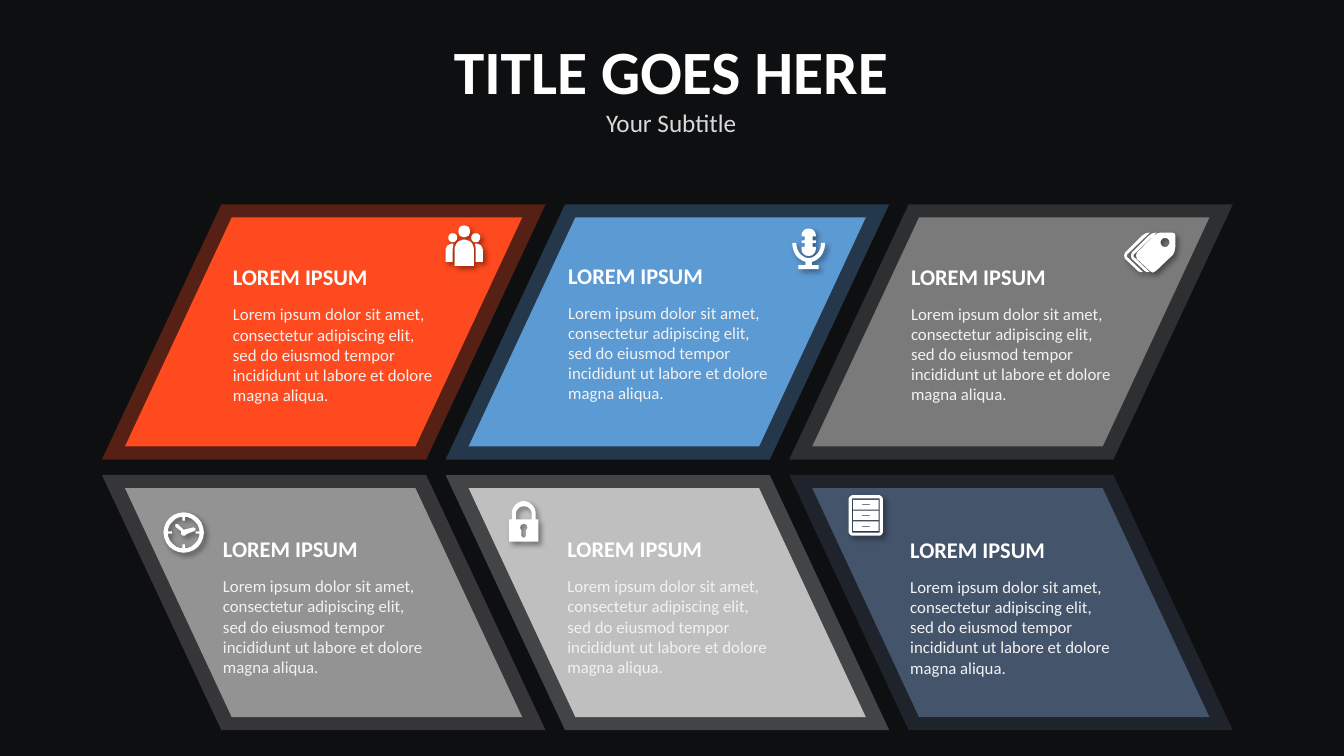
from math import cos, radians, sin

from lxml.etree import SubElement
from pptx import Presentation
from pptx.dml.color import RGBColor
from pptx.enum.text import MSO_ANCHOR, PP_ALIGN
from pptx.oxml.ns import qn
from pptx.util import Cm, Pt

COLORS = {
    "background": "0E0F11", "white": "FFFFFF", "body": "F2F2F2", "subtitle": "D9D9D9",
    "orange": "FE4A1E", "blue": "5C9AD3", "gray": "7A7A7A",
    "middle_gray": "939393", "light_gray": "BFBFBF", "navy": "44546B",
}
BODY = ("Lorem ipsum dolor sit amet, consectetur adipiscing elit, "
        "sed do eiusmod tempor incididunt ut labore et dolore magna aliqua.")
UNIT = Cm(0.01)


def arc(center_x, center_y, radius_x, radius_y, start, end):
    """Return points along an elliptical arc, angles running clockwise."""
    angles = [radians(start + (end - start) * step / 24) for step in range(25)]
    return [(center_x + radius_x * cos(a), center_y + radius_y * sin(a)) for a in angles]


def circle(center_x, center_y, radius):
    """Return the outline of a circle."""
    return arc(center_x, center_y, radius, radius, 0, 360)


def rectangle(left, top, width, height):
    """Return the outline of a rectangle."""
    right, bottom = left + width, top + height
    return [(left, top), (right, top), (right, bottom), (left, bottom)]


def mirror(points, width):
    """Reflect points left to right within a width."""
    return [(width - x, y) for x, y in reversed(points)]


def people_icon():
    """Return the outlines of three people."""
    side = arc(18, 64, 18, 18, 180, 270) + [(20, 46), (18, 58), (18, 92), (0, 92)]
    body = arc(47, 60, 24, 24, 180, 360) + [(71, 102), (23, 102)]
    return [circle(47, 15, 15), circle(18, 31, 11), circle(76, 31, 11),
            body, side, mirror(side, 94)]


def microphone_icon():
    """Return the outlines of a microphone on its stand."""
    slots = [(59, 20), (51, 20), (51, 30), (59, 30), (59, 36), (51, 36), (51, 46), (59, 46)]
    capsule = (arc(41, 18, 18, 18, 180, 360) + slots
               + arc(41, 51, 18, 18, 0, 180) + mirror(slots, 82))
    cradle = arc(41, 36, 41, 49, 0, 180) + arc(41, 36, 31, 38, 180, 0)
    return [capsule, cradle, rectangle(33, 85, 16, 7), rectangle(15, 92, 51, 10)]


def tags_icon():
    """Return the outlines of three stacked tags."""
    front = [(122, 0), (94, 0), (85, 2), (76, 8), (33, 51), (31, 58), (33, 66), (66, 97),
             (73, 101), (81, 97), (124, 56), (128, 48), (130, 36), (130, 8), (128, 2)]
    edge = [(66, 0), (55, 2), (46, 8), (3, 51), (1, 58), (3, 66), (36, 97), (42, 100),
            (48, 99), (8, 61), (8, 56)]
    return [front, circle(104, 25, 11), edge, [(x + 17, y) for x, y in edge]]


def clock_icon():
    """Return the outlines of a clock."""
    hands = [(30, 30), (36, 30), (51, 44), (76, 38), (81, 41), (80, 46),
             (58, 55), (54, 59), (48, 59), (44, 54), (45, 48), (30, 36)]
    ticks = [rectangle(48, y, 6, 10) for y in (11, 81)]
    ticks += [rectangle(x, 48, 10, 6) for x in (11, 81)]
    return [circle(51, 51, 51), circle(51, 51, 40), hands] + ticks


def lock_icon():
    """Return the outlines of a padlock."""
    shackle = (arc(37, 32, 30, 32, 180, 360) + [(67, 46), (57, 46)]
               + arc(37, 31, 20, 18, 360, 180) + [(17, 46), (7, 46)])
    keyhole = arc(37, 66, 9, 9, 130, 410) + [(43, 88), (39, 92), (35, 92), (31, 88)]
    return [shackle, rectangle(0, 46, 74, 56), keyhole]


def cabinet_icon():
    """Return the outlines of a cabinet with three drawers."""
    case = []
    for x, y, start in ((11, 11, 180), (75, 11, 270), (75, 91, 0), (11, 91, 90)):
        case += arc(x, y, 11, 11, start, start + 90)
    contours = [case, rectangle(8, 8, 70, 86)]
    for top in range(12, 67, 27):
        contours += [rectangle(11, top, 64, 24), rectangle(33, top + 11, 20, 2)]
    return contours


def draw_outlines(slide, left, top, contours, color, alpha=None, shadow=False):
    """Draw closed contours as one filled freeform."""
    first, *others = contours
    builder = slide.shapes.build_freeform(*first[0], scale=UNIT)
    builder.add_line_segments(first[1:], close=True)
    for contour in others:
        builder.move_to(*contour[0])
        builder.add_line_segments(contour[1:], close=True)
    shape = builder.convert_to_shape(left, top)
    shape.fill.solid()
    shape.fill.fore_color.rgb = RGBColor.from_string(COLORS[color])
    shape.line.fill.background()
    shape.shadow.inherit = False
    properties = shape.element.spPr
    if alpha:
        color_element = properties.find(qn("a:solidFill"))[0]
        SubElement(color_element, qn("a:alpha"), val=str(alpha * 1000))
    if shadow:
        effect = SubElement(properties.find(qn("a:effectLst")), qn("a:outerShdw"),
                            blurRad=str(Pt(4)), dist=str(Pt(3)), dir="2700000")
        black = SubElement(effect, qn("a:srgbClr"), val="000000")
        SubElement(black, qn("a:alpha"), val="40000")


def write_paragraph(paragraph, text, *, size, color, bold=False, align=PP_ALIGN.LEFT, after=0):
    """Fill a paragraph with formatted text."""
    paragraph.text = text
    paragraph.alignment = align
    paragraph.space_before = Pt(0)
    paragraph.space_after = Pt(after)
    paragraph.font.name = "Calibri"
    paragraph.font.size = Pt(size)
    paragraph.font.bold = bold
    paragraph.font.color.rgb = RGBColor.from_string(COLORS[color])


def slanted(left, top, width, height, slant, flipped):
    """Return a parallelogram leaning right, or left when flipped."""
    right, bottom = left + width, top + height
    points = [(left + slant, top), (right, top), (right - slant, bottom), (left, bottom)]
    return [(x, top + bottom - y) for x, y in points] if flipped else points


def add_card(slide, left, top, color, icon, icon_offset, text_offset, flipped):
    """Place a framed panel with its icon and text."""
    draw_outlines(slide, left, top, [slanted(0, 0, 1118, 643, 301, flipped)], color, alpha=30)
    draw_outlines(slide, left, top, [slanted(58, 33, 1001, 577, 269, flipped)], color)
    icon_left, icon_top = icon_offset
    draw_outlines(slide, left + Cm(icon_left), top + Cm(icon_top), icon, "white", shadow=True)
    text_left, text_top = text_offset
    box = slide.shapes.add_textbox(left + Cm(text_left), top + Cm(text_top), Cm(5.08), Cm(3.58))
    frame = box.text_frame
    frame.word_wrap = True
    frame.margin_left = frame.margin_top = frame.margin_right = frame.margin_bottom = 0
    write_paragraph(frame.paragraphs[0], "LOREM IPSUM", size=16, color="white", bold=True, after=9.8)
    write_paragraph(frame.add_paragraph(), BODY, size=12, color="body")


def add_heading(slide, left, top, width, height):
    """Place the title with its subtitle line."""
    title = slide.shapes.title
    title.left, title.top, title.width, title.height = left, top, width, height
    frame = title.text_frame
    frame.vertical_anchor = MSO_ANCHOR.TOP
    write_paragraph(frame.paragraphs[0], "TITLE GOES HERE", size=44, color="white",
                    bold=True, align=PP_ALIGN.CENTER)
    write_paragraph(frame.add_paragraph(), "Your Subtitle", size=18, color="subtitle",
                    align=PP_ALIGN.CENTER)


def main():
    """Build and save the slide."""
    presentation = Presentation()
    presentation.slide_width, presentation.slide_height = Cm(33.87), Cm(19.05)
    slide = presentation.slides.add_slide(presentation.slide_layouts[5])
    slide.background.fill.solid()
    slide.background.fill.fore_color.rgb = RGBColor.from_string(COLORS["background"])
    add_heading(slide, Cm(9.27), Cm(0.71), Cm(15.29), Cm(2.9))
    cards = [
        ("orange", people_icon(), (8.66, 0.53), (3.3, 1.49)),
        ("blue", microphone_icon(), (8.74, 0.61), (3.09, 1.45)),
        ("gray", tags_icon(), (8.43, 0.71), (3.07, 1.47)),
        ("middle_gray", clock_icon(), (1.55, 0.94), (3.05, 1.52)),
        ("light_gray", lock_icon(), (1.6, 0.66), (3.07, 1.52)),
        ("navy", cabinet_icon(), (1.5, 0.51), (3.05, 1.54)),
    ]
    for index, card in enumerate(cards):
        row, column = divmod(index, 3)
        add_card(slide, Cm(2.57 + 8.66 * column), Cm(5.15 + 6.82 * row), *card, flipped=row == 1)
    presentation.save("out.pptx")


if __name__ == "__main__":
    main()
